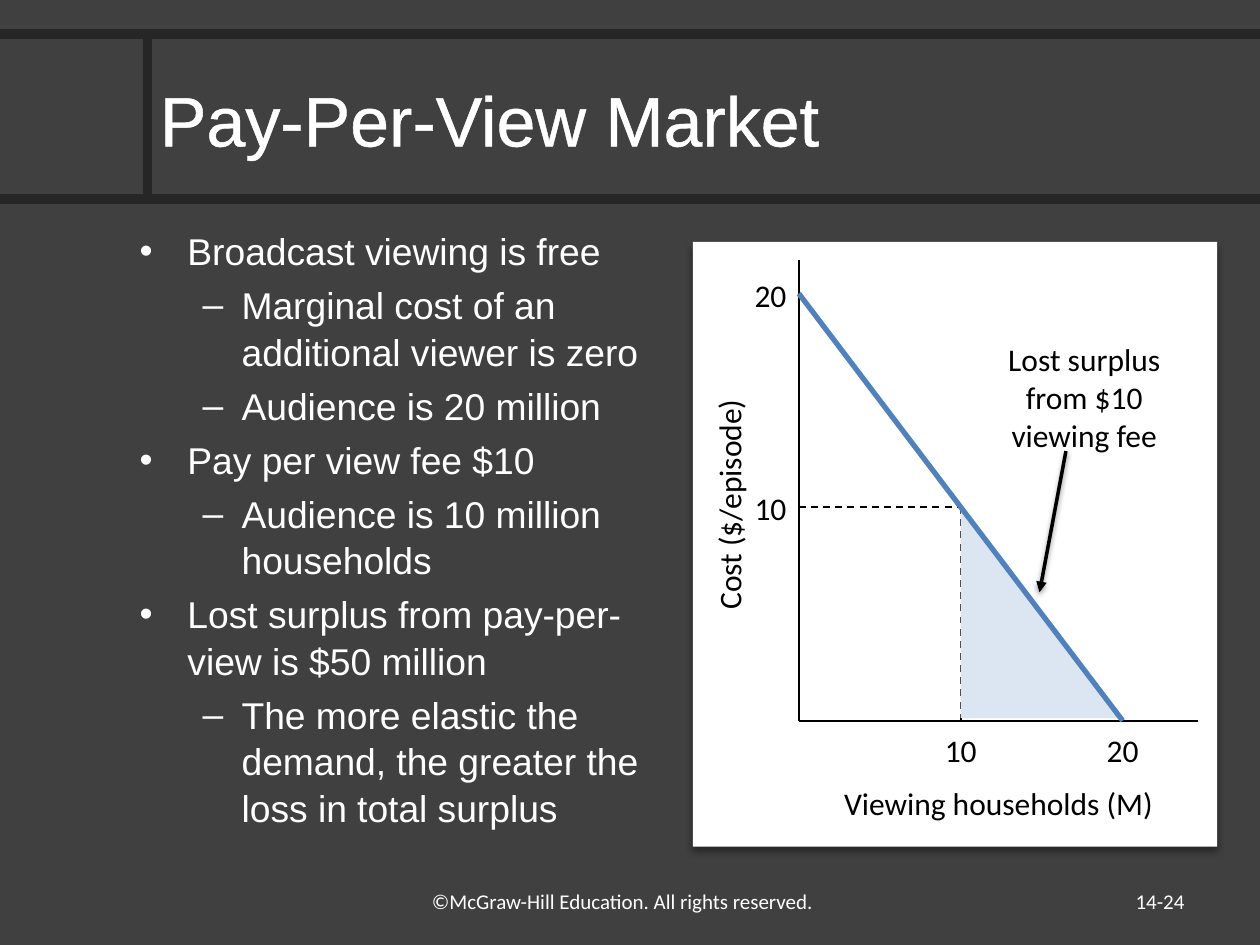
from lxml import etree
from pptx import Presentation
from pptx.dml.color import RGBColor
from pptx.enum.dml import MSO_LINE
from pptx.enum.shapes import MSO_CONNECTOR, MSO_SHAPE
from pptx.enum.text import MSO_ANCHOR, PP_ALIGN
from pptx.oxml.ns import qn
from pptx.util import Inches, Pt

COLORS = {
    "background": "404040",
    "rule": "262626",
    "light": "FFFFFF",
    "ink": "000000",
    "demand": "4F81BD",
    "surplus": "DCE6F2",
}

TITLE = "Pay-Per-View Market"
BULLETS = [
    (0, "Broadcast viewing is free"),
    (1, "Marginal cost of an additional viewer is zero"),
    (1, "Audience is 20 million"),
    (0, "Pay per view fee $10"),
    (1, "Audience is 10 million households"),
    (0, "Lost surplus from pay-per-view is $50 million"),
    (1, "The more elastic the demand, the greater the loss in total surplus"),
]
LEVELS = [("•", 0.38, -0.38), ("–", 0.81, -0.31)]
COPYRIGHT = "©McGraw-Hill Education. All rights reserved."
PAGE_NUMBER = "14-24"
FRAME_RULES = [(0, 1.58, 10, 1.58), (1.17, 0.27, 1.17, 1.58), (0, 0.27, 10, 0.27)]

ORIGIN_X, ORIGIN_Y = 6.34, 5.72
HOUSEHOLD_STEP, DOLLAR_STEP = 0.1285, 0.1695
FEE, CHOKE_PRICE = 10, 20
PAYING, ALL_VIEWERS = 10, 20


def x_at(households):
    return ORIGIN_X + households * HOUSEHOLD_STEP


def y_at(dollars):
    return ORIGIN_Y - dollars * DOLLAR_STEP


def color(name):
    return RGBColor.from_string(COLORS[name])


def add_text(page, text, left, top, width, height, size=18, font="Calibri",
             ink="ink", align=PP_ALIGN.CENTER, anchor=MSO_ANCHOR.TOP):
    box = page.shapes.add_textbox(*map(Inches, (left, top, width, height)))
    frame = box.text_frame
    frame.word_wrap = True
    frame.vertical_anchor = anchor
    paragraph = frame.paragraphs[0]
    paragraph.text = text
    paragraph.alignment = align
    style_font(paragraph, size, font, ink)
    return box


def style_font(paragraph, size, font, ink):
    paragraph.font.size = Pt(size)
    paragraph.font.name = font
    paragraph.font.color.rgb = color(ink)


def add_line(page, x1, y1, x2, y2, ink="ink", width=1, dashed=False):
    line = page.shapes.add_connector(
        MSO_CONNECTOR.STRAIGHT, *map(Inches, (x1, y1, x2, y2)))
    line.line.color.rgb = color(ink)
    line.line.width = Pt(width)
    if dashed:
        line.line.dash_style = MSO_LINE.DASH
    etree.SubElement(line._element.spPr, qn("a:effectLst"))
    return line


def add_shadow(shape, alpha, blur, distance):
    effects = shape._element.spPr.find(qn("a:effectLst"))
    shadow = etree.SubElement(
        effects, qn("a:outerShdw"), blurRad=str(Pt(blur)),
        dist=str(Pt(distance)), dir="5400000", rotWithShape="0")
    shade = etree.SubElement(shadow, qn("a:srgbClr"), val=COLORS["ink"])
    etree.SubElement(shade, qn("a:alpha"), val=str(alpha * 1000))


def fill_plain(shape, name):
    shape.shadow.inherit = False
    shape.fill.solid()
    shape.fill.fore_color.rgb = color(name)
    shape.line.fill.background()


def add_title(page):
    box = add_text(page, TITLE, 1.17, 0.3, 8.83, 1.28, 40, "Arial", "light",
                   PP_ALIGN.LEFT, MSO_ANCHOR.MIDDLE)
    span = box.text_frame.paragraphs[0].runs[0]
    outline = etree.Element(qn("a:ln"), w=str(Pt(1.45)))
    solid = etree.SubElement(outline, qn("a:solidFill"))
    etree.SubElement(solid, qn("a:srgbClr"), val=COLORS["light"])
    span._r.get_or_add_rPr().insert(0, outline)


def add_bullets(page):
    box = page.shapes.add_textbox(*map(Inches, (1.01, 1.75, 4.26, 4.95)))
    frame = box.text_frame
    frame.word_wrap = True
    for index, (level, text) in enumerate(BULLETS):
        paragraph = frame.add_paragraph() if index else frame.paragraphs[0]
        paragraph.text = text
        paragraph.level = level
        mark, margin, indent = LEVELS[level]
        properties = paragraph._p.get_or_add_pPr()
        properties.set("marL", str(Inches(margin)))
        properties.set("indent", str(Inches(indent)))
        etree.SubElement(properties, qn("a:buFont"), typeface="Arial")
        etree.SubElement(properties, qn("a:buChar"), char=mark)
        paragraph.line_spacing = 1.04
        if index:
            paragraph.space_before = Pt(4.3)
        style_font(paragraph, 21.3, "Arial", "light")


def add_diagram(page):
    panel = page.shapes.add_shape(
        MSO_SHAPE.RECTANGLE, *map(Inches, (5.5, 1.92, 4.16, 4.8)))
    fill_plain(panel, "light")
    add_shadow(panel, 40, 4, 3)

    add_text(page, "Viewing households (M)", 6.35, 6.17, 3.15, 0.4)
    cost_label = add_text(page, "Cost ($/episode)", 4.3, 3.83, 2.92, 0.35)
    cost_label.rotation = 270
    for dollars in (CHOKE_PRICE, FEE):
        add_text(page, str(dollars), ORIGIN_X - 0.5, y_at(dollars) - 0.19,
                 0.5, 0.4, align=PP_ALIGN.RIGHT)
    for households in (PAYING, ALL_VIEWERS):
        add_text(page, str(households), x_at(households) - 0.37, 5.75, 0.74, 0.4)

    fee_x, fee_y = x_at(PAYING), y_at(FEE)
    add_line(page, ORIGIN_X, fee_y, fee_x, fee_y, dashed=True)
    add_line(page, fee_x, ORIGIN_Y, fee_x, fee_y, dashed=True)
    add_line(page, ORIGIN_X, 2.06, ORIGIN_X, ORIGIN_Y)
    add_line(page, ORIGIN_X, ORIGIN_Y, 9.51, ORIGIN_Y)

    base = ORIGIN_Y - 0.02
    builder = page.shapes.build_freeform(Inches(fee_x), Inches(fee_y))
    builder.add_line_segments(
        [(Inches(fee_x), Inches(base)),
         (Inches(x_at(ALL_VIEWERS)), Inches(base))], close=True)
    fill_plain(builder.convert_to_shape(), "surplus")

    add_text(page, "Lost surplus from $10 viewing fee", 7.73, 2.65, 1.75, 1.01)
    arrow = add_line(page, 8.46, 3.58, 8.25, 4.7, width=2)
    etree.SubElement(arrow.line._get_or_add_ln(), qn("a:tailEnd"), type="triangle")
    add_shadow(arrow, 38, 3.1, 1.6)
    add_line(page, ORIGIN_X, y_at(CHOKE_PRICE), x_at(ALL_VIEWERS), ORIGIN_Y,
             "demand", 3)


def main():
    deck = Presentation()
    deck.slide_width, deck.slide_height = Inches(10), Inches(7.5)
    page = deck.slides.add_slide(deck.slide_layouts[6])
    page.background.fill.solid()
    page.background.fill.fore_color.rgb = color("background")

    for ends in FRAME_RULES:
        add_line(page, *ends, "rule", 5.5)
    add_title(page)
    add_bullets(page)
    add_text(page, COPYRIGHT, 3.33, 7, 3.33, 0.35, 12, ink="light",
             align=PP_ALIGN.LEFT)
    add_text(page, PAGE_NUMBER, 7.17, 6.95, 2.33, 0.4, 12, ink="light",
             align=PP_ALIGN.RIGHT, anchor=MSO_ANCHOR.MIDDLE)
    add_diagram(page)
    deck.save("out.pptx")


if __name__ == "__main__":
    main()
